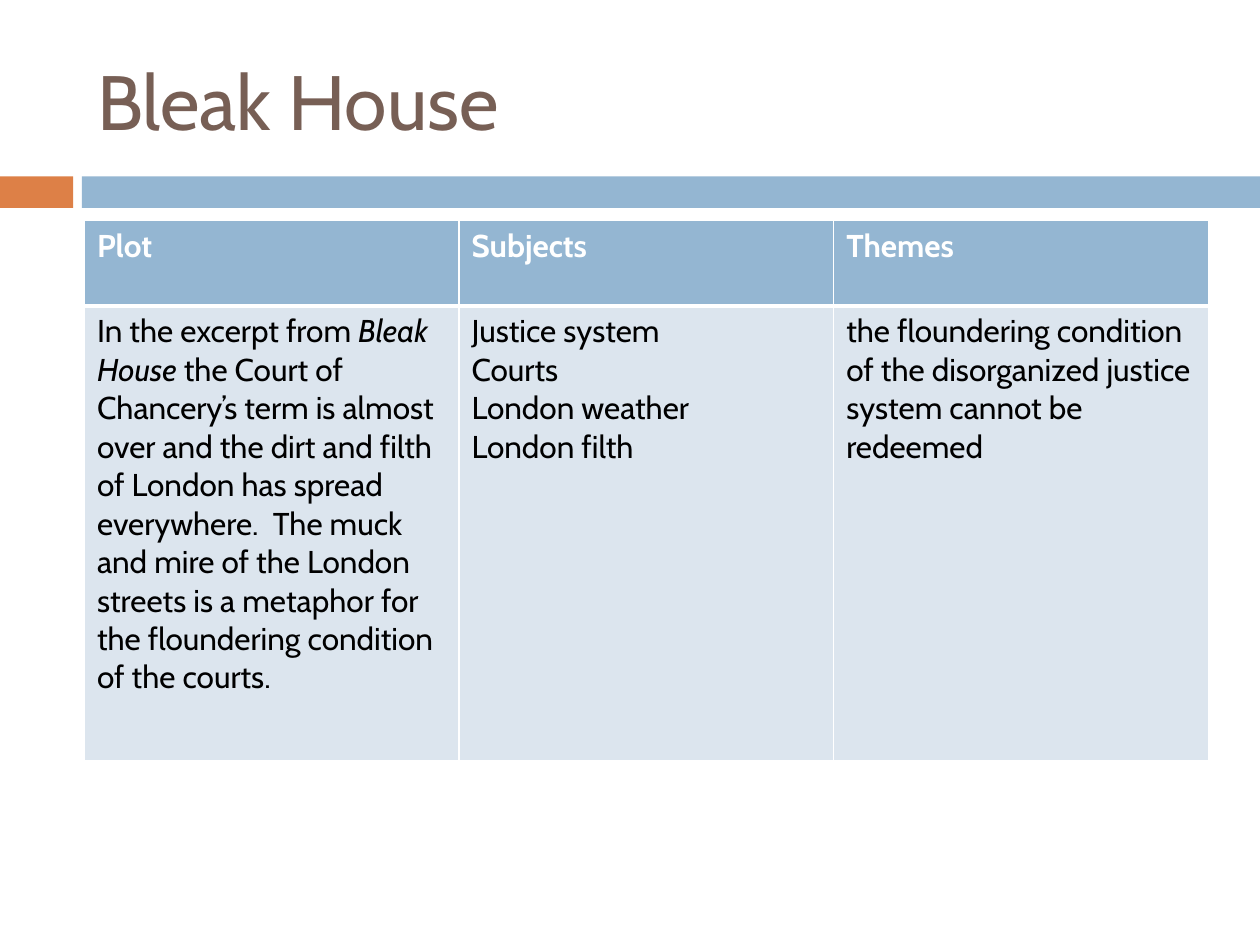
from dataclasses import dataclass

from lxml import etree
from pptx import Presentation
from pptx import util as u
from pptx.dml import color
from pptx.enum import shapes, text
from pptx.oxml import ns


@dataclass(frozen=True)
class Theme:
    """Colours, font and type sizes of the slide."""
    font: str = "Cabin"
    title_size: int = 44
    table_size: int = 18
    title: str = "775F55"
    accent: str = "DD8047"
    band: str = "94B6D2"
    cell: str = "DCE5EE"
    white: str = "FFFFFF"
    black: str = "000000"


THEME = Theme()
LEFT, WIDTH = 0.67, 8.92
ROW_HEIGHTS = (0.68, 3.61)
HEADINGS = ("Plot", "Subjects", "Themes")
PLOT = [[
    ("In the excerpt from ", False),
    ("Bleak House ", True),
    ("the Court of Chancery’s term is almost over and the dirt and filth of "
     "London has spread everywhere.  The muck and mire of the London streets "
     "is a metaphor for the floundering condition of the courts.", False),
]]
SUBJECTS = [[(subject, False)] for subject in
            ("Justice system", "Courts", "London weather", "London filth")]
THEMES = [[("the floundering condition of the disorganized justice system "
            "cannot be redeemed", False)]]


def rgb(value):
    """Return a colour from its hex value."""
    return color.RGBColor.from_string(value)


def write(frame, paras, size, ink, bold=False):
    """Fill a text frame with paragraphs of (text, italic) spans."""
    frame.word_wrap = True
    for index, spans in enumerate(paras):
        para = frame.add_paragraph() if index else frame.paragraphs[0]
        para.alignment = text.PP_ALIGN.LEFT
        for words, italic in spans:
            span = para.add_run()
            span.text = words
            span.font.name = THEME.font
            span.font.size = u.Pt(size)
            span.font.color.rgb = rgb(ink)
            span.font.bold = bold
            span.font.italic = italic


def add_title(page, words):
    """Place and format the title placeholder."""
    title = page.shapes.title
    title.left, title.top = u.Inches(LEFT), u.Inches(0.25)
    title.width, title.height = u.Inches(WIDTH), u.Inches(1.08)
    title.text_frame.vertical_anchor = text.MSO_ANCHOR.MIDDLE
    write(title.text_frame, [[(words, False)]], THEME.title_size, THEME.title)


def add_bar(page, left, width, fill):
    """Add one part of the strip below the title."""
    bar = page.shapes.add_shape(
        shapes.MSO_SHAPE.RECTANGLE,
        u.Inches(left), u.Inches(1.4), u.Inches(width), u.Inches(0.25))
    bar.shadow.inherit = False
    bar.fill.solid()
    bar.fill.fore_color.rgb = rgb(fill)
    bar.line.fill.background()


def set_borders(cell, **widths):
    """Draw white cell borders with widths in points by side."""
    properties = cell._tc.get_or_add_tcPr()
    for side, width in widths.items():
        line = etree.SubElement(properties, ns.qn(f"a:ln{side}"), w=str(u.Pt(width)))
        fill = etree.SubElement(line, ns.qn("a:solidFill"))
        etree.SubElement(fill, ns.qn("a:srgbClr"), val=THEME.white)


def add_table(page, columns):
    """Add the table from (heading, paragraphs) columns."""
    table = page.shapes.add_table(
        len(ROW_HEIGHTS), len(columns), u.Inches(LEFT), u.Inches(1.75),
        u.Inches(WIDTH), u.Inches(sum(ROW_HEIGHTS))).table
    for row, height in zip(table.rows, ROW_HEIGHTS):
        row.height = u.Inches(height)
    for index, (heading, paras) in enumerate(columns):
        head, body = table.cell(0, index), table.cell(1, index)
        set_borders(head, L=1, R=1, T=1, B=3)
        set_borders(body, L=1, R=1, T=3, B=1)
        for cell, fill in ((head, THEME.band), (body, THEME.cell)):
            cell.fill.solid()
            cell.fill.fore_color.rgb = rgb(fill)
        write(head.text_frame, [[(heading, False)]], THEME.table_size, THEME.white, True)
        write(body.text_frame, paras, THEME.table_size, THEME.black)


def main():
    """Build and save the slide."""
    deck = Presentation()
    deck.slide_width, deck.slide_height = u.Inches(10), u.Inches(7.5)
    page = deck.slides.add_slide(deck.slide_layouts.get_by_name("Title Only"))
    add_bar(page, 0, 0.58, THEME.accent)
    add_bar(page, 0.65, 9.35, THEME.band)
    add_title(page, "Bleak House")
    add_table(page, list(zip(HEADINGS, (PLOT, SUBJECTS, THEMES))))
    deck.save("out.pptx")


if __name__ == "__main__":
    main()
